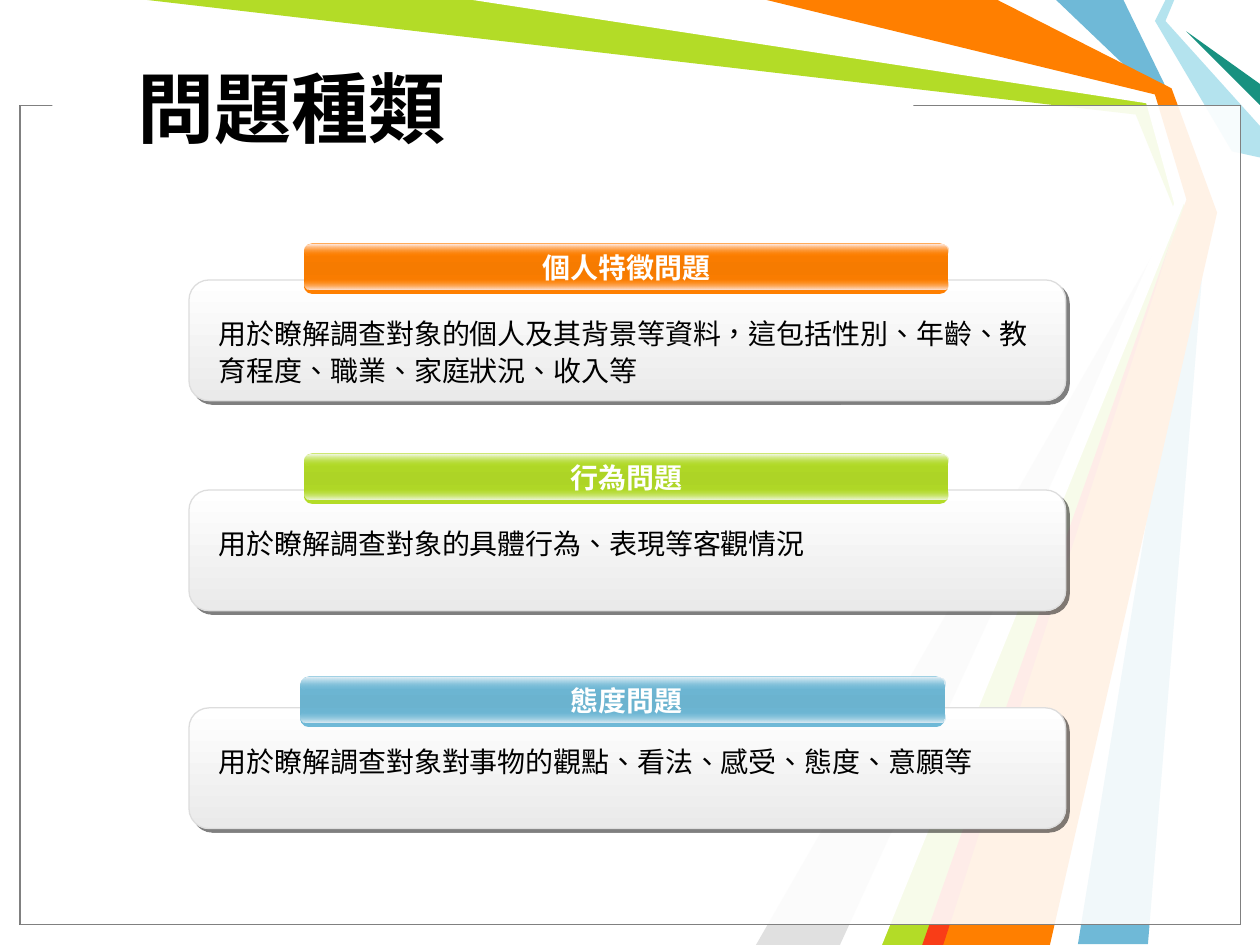
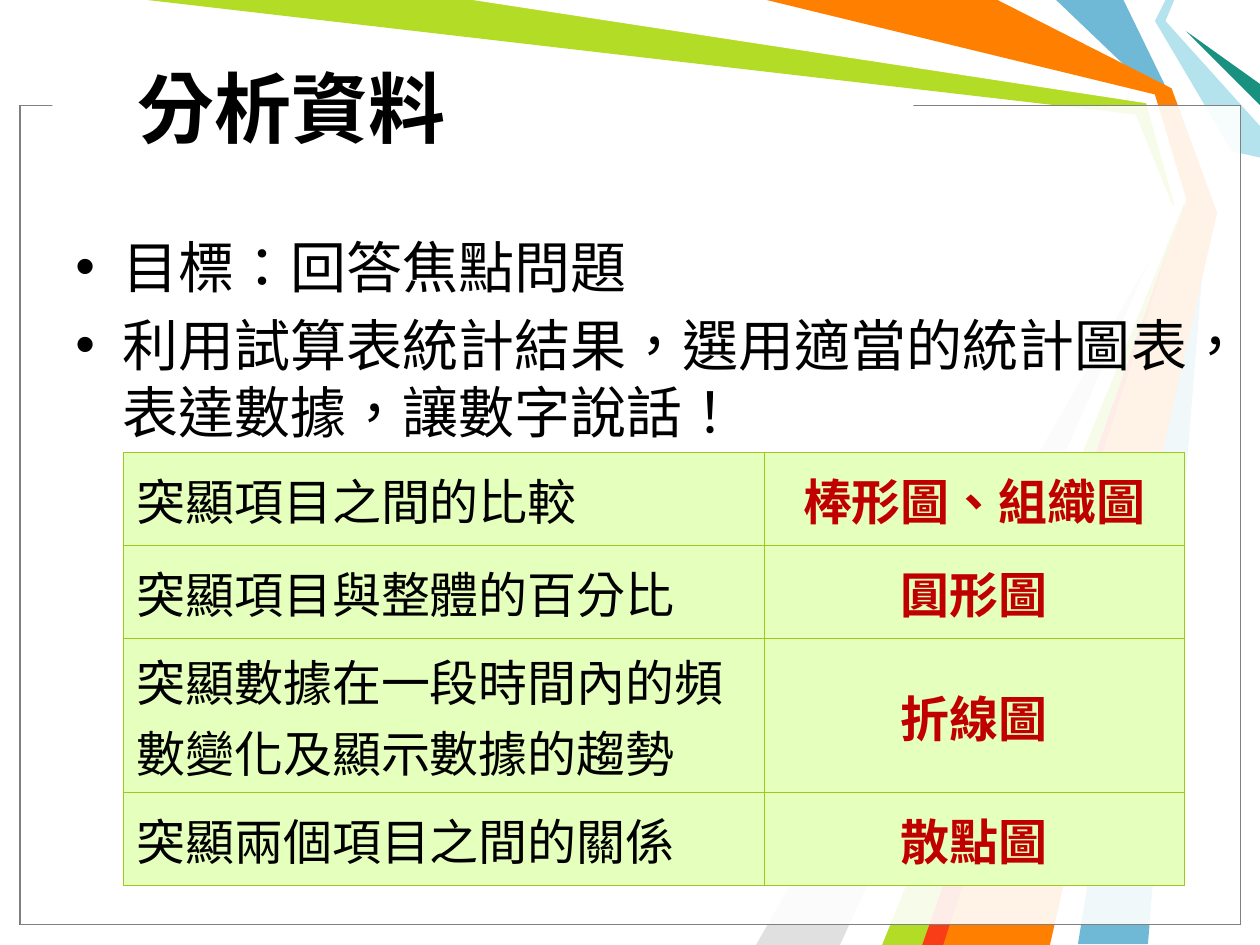
"""Build two slides on question types and data analysis."""
from pptx import Presentation
from pptx.dml.color import RGBColor
from pptx.enum import shapes, text
from pptx.oxml import parse_xml
from pptx.oxml.ns import nsdecls, qn
from pptx.util import Pt

NOTO, ARIAL = "Noto Sans CJK SC", "Arial"
BLACK, WHITE, RED = "000000", "FFFFFF", "C00000"
BLUE, GREEN, ORANGE = "6FB9D7", "B3DC27", "FF7F00"
GREY, EDGE, RULE, MINT = "808080", "DDDDDD", "A1C71D", "E5FFBD"
RECT = shapes.MSO_SHAPE.RECTANGLE
ROUND = shapes.MSO_SHAPE.ROUNDED_RECTANGLE
MID, CENTER = text.MSO_ANCHOR.MIDDLE, text.PP_ALIGN.CENTER

RAYS = [
    (BLUE, [(642, 0), (669, 55.5), (690, 120), (656, 539.5), (616, 539.5),
            (684, 120), (660, 54), (603.5, 0)]),
    (GREEN, [(84, 0), (276, 0), (658, 56), (678, 121.5), (534, 540),
             (498, 540), (673, 124.5), (649, 65.5)]),
    ("E0E0E0", [(480, 540), (667.5, 130.5), (432, 540)]),
    (WHITE, [(270, 0), (655, 59), (671, 116.5), (486, 540), (504, 540),
             (677.5, 114), (660, 54), (432, 0)]),
    ("B4E3EE", [(666, 0), (660, 12), (704, 86.5), (720, 90), (720, 72),
                (666, 12), (671, 0)]),
    ("189180", [(720, 60), (678, 18), (720, 48)]),
    (ORANGE, [(438, 0), (570, 0), (669.5, 50.5), (695.5, 121.5), (600, 540),
              (528, 540), (678, 114), (660, 54)]),
    ("F93D17", [(527, 540), (671, 132), (539, 540)]),
]

CARDS = [
    (160, 173.5, 139, ORANGE, "F67B00", "FFECE7", "個人特徵問題",
     "用於瞭解調查對象的個人及其背景等資料，這包括性別、年齡、教育程度、職業、家庭狀況、收入等"),
    (280, 173.5, 259, GREEN, "ADD426", "F3F9E9", "行為問題",
     "用於瞭解調查對象的具體行為、表現等客觀情況"),
    (404.5, 171.5, 386.5, BLUE, "6BB3CF", "E5F0F6", "態度問題",
     "用於瞭解調查對象對事物的觀點、看法、感受、態度、意願等"),
]

GOALS = ["目標：回答焦點問題",
         "利用試算表統計結果，選用適當的統計圖表，表達數據，讓數字說話！"]

CHARTS = [
    ("突顯項目之間的比較", "棒形圖、組織圖"),
    ("突顯項目與整體的百分比", "圓形圖"),
    ("突顯數據在一段時間內的頻數變化及顯示數據的趨勢", "折線圖"),
    ("突顯兩個項目之間的關係", "散點圖"),
]


def rgb(code):
    """Turn a hex string into a colour."""
    return RGBColor.from_string(code)


def xml(tag, body):
    """Make a drawing element from its tag and inner text."""
    name = tag.split()[0]
    return parse_xml(f"<a:{tag} {nsdecls('a')}>{body}</a:{name}>")


def ink(code, alpha=100):
    """Give the markup of a colour with an opacity in percent."""
    return f'<a:srgbClr val="{code}"><a:alpha val="{alpha * 1000}"/></a:srgbClr>'


def shade(size, alpha):
    """Give the markup of a black shadow cast down and to the right."""
    return (f'<a:outerShdw blurRad="0" dist="{Pt(size)}" dir="2700000" '
            f'algn="tl" rotWithShape="0">{ink(BLACK, alpha)}</a:outerShdw>')


def style(para, size, font, color=BLACK, bold=False):
    """Format every run of a paragraph."""
    for run in para.runs:
        run.font.size, run.font.bold, run.font.name = Pt(size), bold, font
        run.font.color.rgb = rgb(color)
        prop = run._r.get_or_add_rPr()
        prop.set("lang", "zh-TW")
        prop.find(qn("a:latin")).addnext(xml(f'ea typeface="{NOTO}"', ""))


def block(slide, kind, box, fill=None, line=None, alpha=100):
    """Add a preset shape with a plain fill and line."""
    item = slide.shapes.add_shape(kind, *map(Pt, box))
    item.shadow.inherit = False
    if fill:
        item.fill.solid()
        item.fill.fore_color.rgb = rgb(fill)
        mark = item._element.spPr.find(qn("a:solidFill"))[0]
        mark.append(xml(f'alpha val="{alpha * 1000}"', ""))
    if line:
        item.line.color.rgb = rgb(line)
        item.line.width = Pt(0.75)
    else:
        item.line.fill.background()
    return item


def pill(slide, box, curve, stops, line=None):
    """Add a rounded box with a gradient from top to bottom."""
    item = block(slide, ROUND, box, line=line)
    item.adjustments[0] = curve
    item.fill.background()
    marks = "".join(f'<a:gs pos="{at * 1000}">{ink(code, alpha)}</a:gs>'
                    for at, code, alpha in stops)
    ramp = xml('gradFill rotWithShape="1"',
               f'<a:gsLst>{marks}</a:gsLst><a:lin ang="5400000" scaled="0"/>')
    prop = item._element.spPr
    prop.replace(prop.find(qn("a:noFill")), ramp)
    return item


def words(slide, box, lines, wrap=True):
    """Add a text box with one paragraph a line."""
    frame = slide.shapes.add_textbox(*map(Pt, box)).text_frame
    frame.word_wrap = wrap
    frame.text = "\n".join(lines)
    return frame


def base(deck, title):
    """Add a slide with its rays, frame and title."""
    slide = deck.slides.add_slide(deck.slide_layouts[6])
    for color, spots in RAYS:
        spots = [(Pt(x), Pt(y)) for x, y in spots]
        pen = slide.shapes.build_freeform(*spots[0])
        pen.add_line_segments(spots[1:], close=True)
        ray = pen.convert_to_shape()
        ray.shadow.inherit = False
        ray.fill.solid()
        ray.fill.fore_color.rgb = rgb(color)
        ray.line.fill.background()
    for line in (BLACK, GREY):
        block(slide, RECT, (11.5, 60.5, 697.5, 468), WHITE, line, 69)
    block(slide, RECT, (30, 53.5, 492, 12), WHITE)
    frame = words(slide, (71.5, 16, 496, 90), [title])
    frame.vertical_anchor = MID
    style(frame.paragraphs[0], 44, NOTO, bold=True)
    return slide


def bar(slide, left, top, hue, deep, glow, label):
    """Add a glossy heading bar and its label."""
    pill(slide, (left, top, 368.5, 29), 0.175,
         [(0, hue, 100), (50, deep, 100), (100, hue, 100)])
    ends = [(20, [(0, hue, 0), (100, glow, 100)]),
            (0.75, [(0, glow, 100), (100, hue, 0)])]
    for drop, stops in ends:
        pill(slide, (left + 0.5, top + drop, 368, 6.5), 0.5, stops)
    para = words(slide, (302, top, 112, 26.5), [label], False).paragraphs[0]
    para.alignment = CENTER
    para.line_spacing = Pt(20)
    style(para, 16, ARIAL, WHITE, True)
    prop = para.runs[0]._r.get_or_add_rPr()
    prop.find(qn("a:solidFill")).addnext(xml("effectLst", shade(1.5, 100)))


def card(slide, top, left, rise, hue, deep, glow, label, note):
    """Add a pale card with its heading bar and note."""
    item = pill(slide, (108, top, 501, 69), 0.167,
                [(0, WHITE, 100), (100, "EAEAEA", 100)], EDGE)
    prop = item._element.spPr
    prop.replace(prop.find(qn("a:effectLst")),
                 xml("effectLst", shade(2.8, 50)))
    bar(slide, left, rise, hue, deep, glow, label)
    para = words(slide, (118, top + 15.5, 480, 48), [note]).paragraphs[0]
    para.line_spacing = Pt(21)
    style(para, 16, ARIAL)


def goals(slide, box):
    """Add the bulleted aims."""
    for row, para in enumerate(words(slide, box, GOALS).paragraphs):
        prop = para._p.get_or_add_pPr()
        prop.set("marL", str(Pt(27)))
        prop.set("indent", str(Pt(-27)))
        prop.append(xml(f'buFont typeface="{ARIAL}"', ""))
        prop.append(xml('buChar char="•"', ""))
        para.line_spacing = Pt(38)
        if row:
            para.space_before = Pt(7)
        style(para, 32, NOTO)


def grid(slide, left, top):
    """Add the table that matches aims to charts."""
    wide, high = (366, 240), (53.25, 53.25, 88, 53.25)
    table = slide.shapes.add_table(
        len(CHARTS), 2, Pt(left), Pt(top), Pt(sum(wide)), Pt(sum(high))).table
    table.first_row = table.horz_banding = False
    for col, size in zip(table.columns, wide):
        col.width = Pt(size)
    for row, size, pair in zip(table.rows, high, CHARTS):
        row.height = Pt(size)
        for spot, (cell, value) in enumerate(zip(row.cells, pair)):
            cell.fill.solid()
            cell.fill.fore_color.rgb = rgb(MINT)
            cell.vertical_anchor = MID
            prop = cell._tc.get_or_add_tcPr()
            for side, name in enumerate("LRTB"):
                prop.insert(side, xml(f'ln{name} w="{Pt(0.75)}"',
                                      f"<a:solidFill>{ink(RULE)}</a:solidFill>"))
            cell.text_frame.text = value
            para = cell.text_frame.paragraphs[0]
            if spot:
                para.alignment = CENTER
            style(para, 28, ARIAL, RED if spot else BLACK, bool(spot))


def main():
    """Build and save the deck."""
    deck = Presentation()
    deck.slide_width, deck.slide_height = Pt(720), Pt(540)
    kinds = base(deck, "問題種類")
    for data in CARDS:
        card(kinds, *data)
    study = base(deck, "分析資料")
    goals(study, (36, 129.5, 654, 125))
    grid(study, 70.75, 258.5)
    deck.save("out.pptx")


if __name__ == "__main__":
    main()
